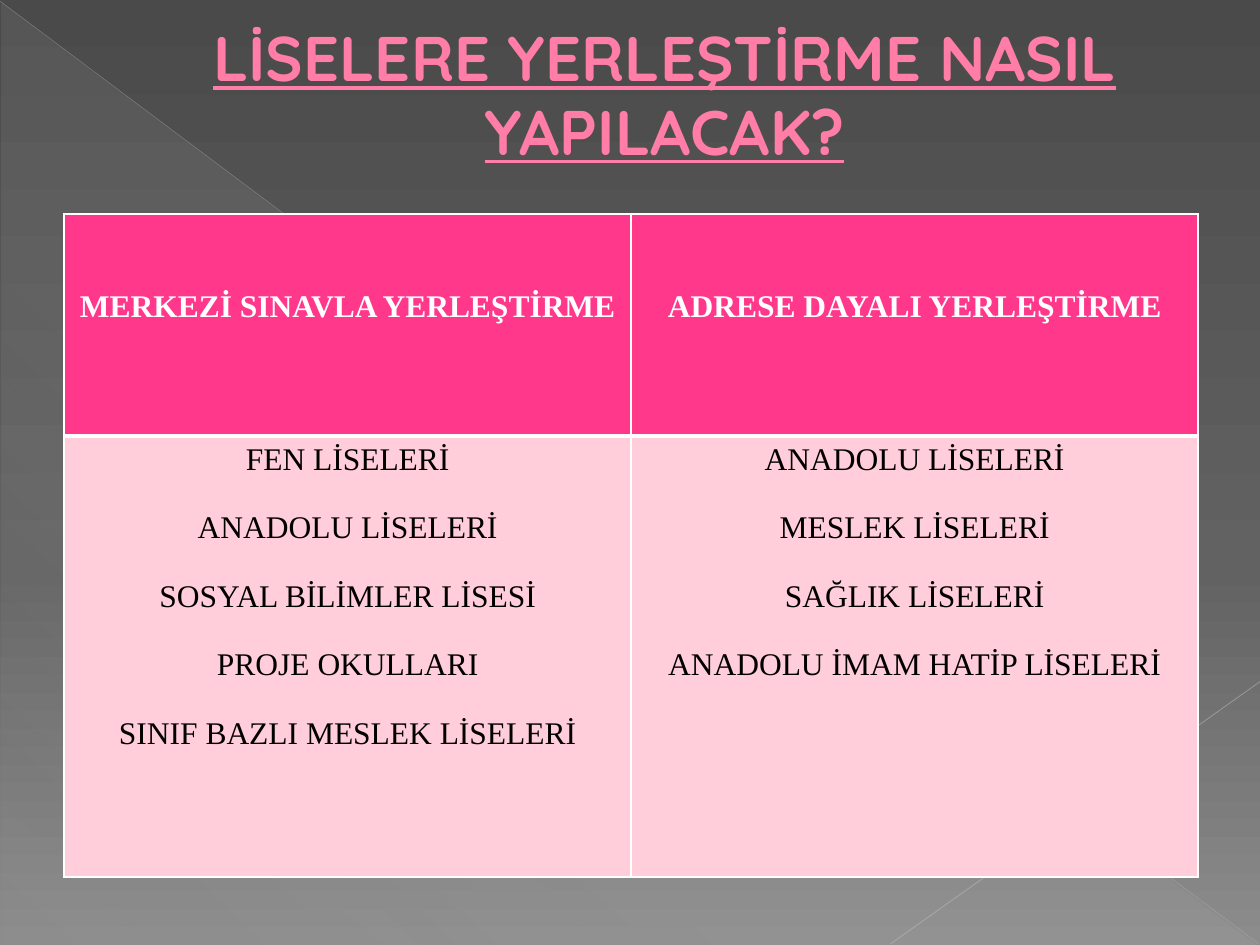
from pptx import Presentation
from pptx.dml.color import RGBColor
from pptx.enum.shapes import MSO_CONNECTOR as CONN, MSO_SHAPE as SHAPE
from pptx.enum.text import MSO_ANCHOR as ANCHOR, PP_ALIGN as ALIGN
from pptx.oxml import parse_xml
from pptx.oxml.ns import nsdecls, qn
from pptx.util import Inches, Pt

W, H = 10, 7.5
LEFT, WIDTH = 0.51, 9
WHITE = "FFFFFF"
COLUMNS = [
    ("MERKEZİ SINAVLA YERLEŞTİRME",
     ["FEN LİSELERİ", "ANADOLU LİSELERİ", "SOSYAL BİLİMLER LİSESİ",
      "PROJE OKULLARI", "SINIF BAZLI MESLEK LİSELERİ"]),
    ("ADRESE DAYALI YERLEŞTİRME",
     ["ANADOLU LİSELERİ", "MESLEK LİSELERİ", "SAĞLIK LİSELERİ",
      "ANADOLU İMAM HATİP LİSELERİ"]),
]


def rgb(color):
    """Turn a hex string into a colour."""
    return RGBColor.from_string(color)


def solid_xml(color, alpha=100):
    """Return the XML of a solid fill with the given opacity."""
    return (f'<a:solidFill><a:srgbClr val="{color}">'
            f'<a:alpha val="{alpha * 1000}"/></a:srgbClr></a:solidFill>')


def line_element(tag, color, width):
    """Return a line element for a cell border or a text outline."""
    return parse_xml(f'<a:{tag} {nsdecls("a")} w="{Pt(width)}">'
                     f'{solid_xml(color)}</a:{tag}>')


def set_gradient(parent, stops, angle):
    """Replace the solid fill of parent by a linear gradient."""
    gs = "".join(f'<a:gs pos="{pos * 1000}"><a:srgbClr val="{color}">'
                 f'<a:alpha val="{alpha * 1000}"/></a:srgbClr></a:gs>'
                 for pos, color, alpha in stops)
    grad = parse_xml(f'<a:gradFill {nsdecls("a")} rotWithShape="1">'
                     f'<a:gsLst>{gs}</a:gsLst>'
                     f'<a:lin ang="{angle * 60000}" scaled="0"/></a:gradFill>')
    parent.replace(parent.find(qn("a:solidFill")), grad)


def add_background(slide):
    """Paint the grey gradient and the pale triangle."""
    slide.background.fill.solid()
    slide.background.fill.fore_color.rgb = rgb("626262")
    set_gradient(next(slide._element.iter(qn("p:bgPr"))),
                 [(0, "4A4A4A", 100), (60, "626262", 100), (100, "8C8C8C", 100)], 90)
    sp = slide.shapes.add_shape(SHAPE.RIGHT_TRIANGLE, Inches(0.01), Inches(0.02),
                                Inches(W - 0.02), Inches(H - 0.02))
    sp.shadow.inherit = False
    sp.line.fill.background()
    sp.fill.solid()
    sp.fill.fore_color.rgb = rgb("D2D2D2")
    set_gradient(sp._element.spPr,
                 [(0, "D2D2D2", 10), (70, "D2D2D2", 8), (100, "D2D2D2", 1)], 133)


def add_line(slide, start, end, color, width, alpha):
    """Draw a thin translucent line."""
    ends = [Inches(v) for v in (*start, *end)]
    line = slide.shapes.add_connector(CONN.STRAIGHT, *ends)
    line.line.width = Pt(width)
    line.line.color.rgb = rgb(color)
    sp_pr = line._element.spPr
    ln = sp_pr.find(qn("a:ln"))
    ln.replace(ln.find(qn("a:solidFill")),
               parse_xml(solid_xml(color, alpha).replace(
                   "<a:solidFill>", f'<a:solidFill {nsdecls("a")}>')))
    sp_pr.append(parse_xml(f'<a:effectLst {nsdecls("a")}/>'))


def format_paragraph(p, font, size, color, bold):
    """Centre a paragraph and format its runs."""
    p.alignment = ALIGN.CENTER
    for r in p.runs:
        r.font.name, r.font.size, r.font.bold = font, Pt(size), bold
        r.font.color.rgb = rgb(color)


def add_title(slide, text):
    """Add the underlined and outlined title."""
    tf = slide.shapes.add_textbox(Inches(LEFT), 0, Inches(WIDTH), Inches(1.53)).text_frame
    tf.word_wrap = True
    tf.vertical_anchor = ANCHOR.MIDDLE
    tf.margin_left = Inches(0.63)
    tf.text = text
    p = tf.paragraphs[0]
    p.line_spacing = 0.97
    format_paragraph(p, "Quicksand", 36, "FF7DA7", True)
    font = p.runs[0].font
    font.underline = True
    font._element.insert(0, line_element("ln", "B12761", 0.5))


def fill_cell(cell, lines, fill, color, bold, bottom):
    """Write the lines into a cell and set its fill and borders."""
    cell.text_frame.text = "\n".join(lines)
    for i, p in enumerate(cell.text_frame.paragraphs):
        format_paragraph(p, "Times New Roman", 18, color, bold)
        p.space_before = Pt(19.2 if i else 0)
    cell.fill.solid()
    cell.fill.fore_color.rgb = rgb(fill)
    borders = (("lnL", 1), ("lnR", 1), ("lnT", 1), ("lnB", bottom))
    for i, (tag, width) in enumerate(borders):
        cell._tc.tcPr.insert(i, line_element(tag, WHITE, width))


def add_school_table(slide):
    """Add the table with one column for each way of placement."""
    heights = (1.76, 3.5)
    table = slide.shapes.add_table(2, len(COLUMNS), Inches(LEFT), Inches(1.7),
                                   Inches(WIDTH), Inches(sum(heights))).table
    for row, height in zip(table.rows, heights):
        row.height = Inches(height)
    for col, (heading, schools) in enumerate(COLUMNS):
        head = table.cell(0, col)
        fill_cell(head, [heading], "FF388C", WHITE, True, 3)
        head.margin_top = Inches(0.6)
        fill_cell(table.cell(1, col), schools, "FFCEDA", "000000", False, 1)


def main():
    """Build and save the slide."""
    prs = Presentation()
    prs.slide_width, prs.slide_height = Inches(W), Inches(H)
    slide = prs.slides.add_slide(prs.slide_layouts[6])
    add_background(slide)
    add_line(slide, (0, 0.01), (9.99, 7.49), "BFBFBF", 0.39, 35)
    add_line(slide, (W, 5.41), (7.07, 7.49), "C6C6C6", 0.47, 45)
    add_title(slide, "LİSELERE YERLEŞTİRME NASIL YAPILACAK?")
    add_school_table(slide)
    prs.save("out.pptx")


if __name__ == "__main__":
    main()
